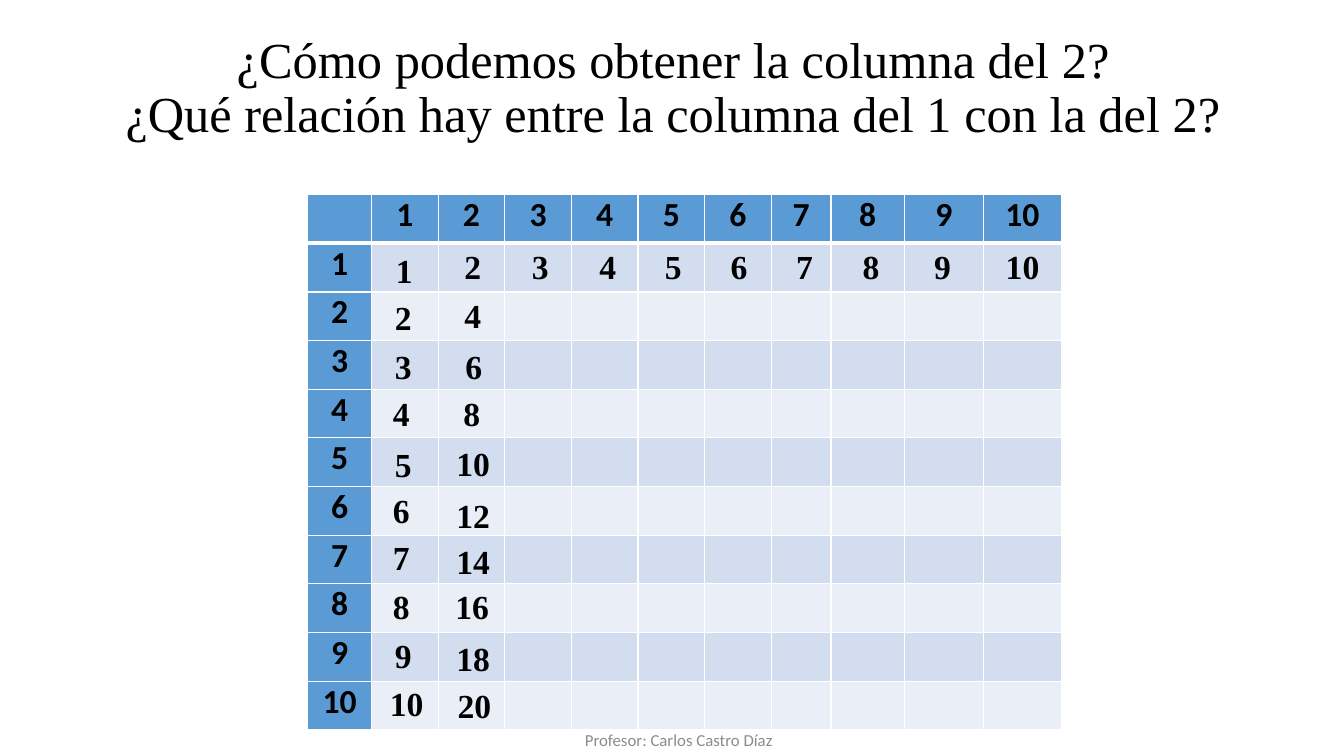
from lxml import etree
from pptx import Presentation
from pptx.dml.color import RGBColor
from pptx.enum.text import MSO_ANCHOR, PP_ALIGN
from pptx.oxml.ns import qn
from pptx.util import Pt

CENTER = PP_ALIGN.CENTER
MIDDLE = MSO_ANCHOR.MIDDLE
TOP = MSO_ANCHOR.TOP
BLACK = RGBColor(0x00, 0x00, 0x00)
GREY = RGBColor(0x8C, 0x8C, 0x8C)
HEADER_BLUE = RGBColor(0x5B, 0x9B, 0xD5)
ODD_ROW = RGBColor(0xD2, 0xDE, 0xEF)
EVEN_ROW = RGBColor(0xEA, 0xEF, 0xF7)
SERIF = "Times New Roman"
SANS = "Calibri"


def style_text(paragraph, text, font_name, size, color=BLACK, bold=False):
    paragraph.text = text
    paragraph.alignment = CENTER
    paragraph.font.name = font_name
    paragraph.font.size = Pt(size)
    paragraph.font.bold = bold
    paragraph.font.color.rgb = color


def add_text(left, top, width, height, anchor, text, *style):
    box = slide.shapes.add_textbox(Pt(left), Pt(top), Pt(width), Pt(height))
    frame = box.text_frame
    frame.word_wrap = True
    frame.vertical_anchor = anchor
    style_text(frame.paragraphs[0], text, *style)
    return frame


presentation = Presentation()
presentation.slide_width = Pt(960)
presentation.slide_height = Pt(540)
slide = presentation.slides.add_slide(presentation.slide_layouts[6])

# Title
questions = add_text(
    67, 14.4, 828, 104.4, MIDDLE,
    "¿Cómo podemos obtener la columna del 2?\v"
    "¿Qué relación hay entre la columna del 1 con la del 2?",
    SERIF, 36)
questions.paragraphs[0].line_spacing = 0.9
questions.margin_bottom = Pt(9)

# Multiplication table: headings 1 to 10 on both axes
column_widths = [45.6] + [47.6] * 6 + [42.6, 52.6, 56.2, 56.2]
row_height = 34.77
grid = slide.shapes.add_table(11, 11, Pt(219.8), Pt(139), Pt(sum(column_widths)),
                              Pt(11 * row_height)).table
for column, width in zip(grid.columns, column_widths):
    column.width = Pt(width)
for row_number, row in enumerate(grid.rows):
    row.height = Pt(row_height)
    for column_number, cell in enumerate(row.cells):
        is_heading = row_number == 0 or column_number == 0
        cell.fill.solid()
        cell.fill.fore_color.rgb = (
            HEADER_BLUE if is_heading else ODD_ROW if row_number % 2 else EVEN_ROW)
        if is_heading:
            cell.margin_left = cell.margin_right = Pt(5)
            cell.margin_top = cell.margin_bottom = 0
            heading = str(row_number + column_number or "")
            style_text(cell.text_frame.paragraphs[0], heading, SANS, 24, BLACK, True)

        # White borders, thicker below the header row
        borders = {"a:lnL": 1, "a:lnR": 1,
                   "a:lnT": 3 if row_number == 1 else 1,
                   "a:lnB": 3 if row_number == 0 else 1}
        properties = cell._tc.get_or_add_tcPr()
        for position, (side, weight) in enumerate(borders.items()):
            line = etree.Element(qn(side), w=str(Pt(weight)))
            fill = etree.SubElement(line, qn("a:solidFill"))
            etree.SubElement(fill, qn("a:srgbClr"), val="FFFFFF")
            properties.insert(position, line)

# Hand-placed answers: (value, centre, top)
column_1_centers = [288.7, 288, 288, 286.6, 288, 286.6, 286.6, 286.6, 288, 290.5]
column_1_tops = [175, 208.8, 243.4, 277.2, 313.2, 346.3, 380.2, 414.7, 450, 484.6]
column_2_centers = [337.7, 337.7, 338.4, 337, 338, 338, 338, 337.3, 338, 338.8]
column_2_tops = [172.1, 207.4, 243.4, 277.2, 312.5, 349.9, 383, 414.7, 452.2, 486]
row_1_centers = [385.9, 434.2, 481, 527.8, 574.6, 622.1, 673.2, 730.4]
row_1_top = 172.1

answers = list(zip(range(1, 11), column_1_centers, column_1_tops))
answers += zip(range(2, 21, 2), column_2_centers, column_2_tops)
answers += [(value, center, row_1_top)
            for value, center in enumerate(row_1_centers, start=3)]
for value, center, top in answers:
    width = 33 if value < 10 else 46.8
    add_text(center - width / 2, top, width, 36, TOP, str(value), SERIF, 24, BLACK, True)

# Footer
add_text(406.8, 522.7, 156.2, 12.2, MIDDLE,
         "Profesor: Carlos Castro Díaz", SANS, 12, GREY)

presentation.save("out.pptx")
